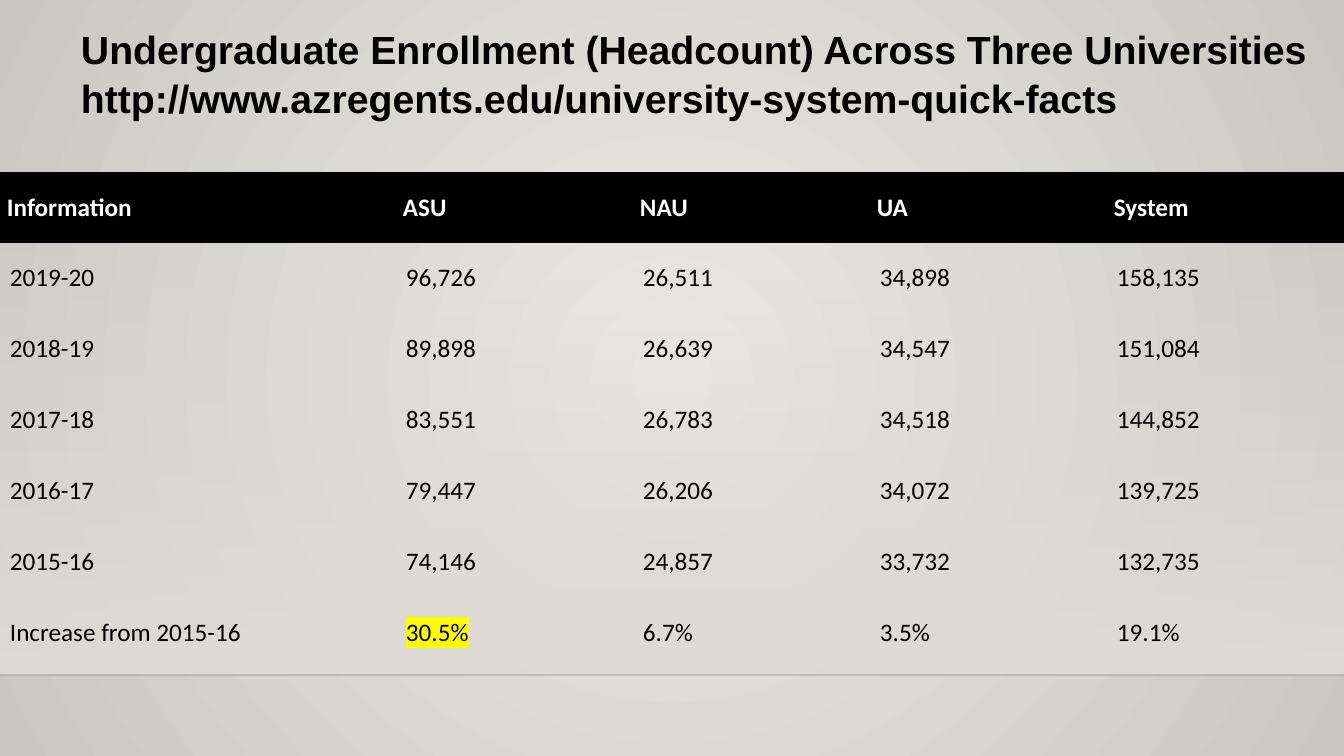
import pptx
import pptx.util
import pptx.dml.color
import pptx.enum.shapes
import pptx.enum.text
import pptx.oxml
import pptx.oxml.ns

RGBColor = pptx.dml.color.RGBColor
BLACK = RGBColor(0x00, 0x00, 0x00)
WHITE = RGBColor(0xFF, 0xFF, 0xFF)
YELLOW = RGBColor(0xFF, 0xFF, 0x00)
PALE = RGBColor(0xEC, 0xEA, 0xE7)
STONE = RGBColor(0xCA, 0xC7, 0xC1)
SAND = RGBColor(0xDF, 0xDB, 0xD5)
RULE = RGBColor(0x00, 0x00, 0x01)

WIDTH, HEIGHT = 1344, 756
EMU_PER_PX = 914400 / 100.8
NO_STYLE = "{2D5ABB26-0587-4C30-8999-92F81FD0307C}"
MIDDLE = pptx.enum.text.MSO_ANCHOR.MIDDLE
TOP = pptx.enum.text.MSO_ANCHOR.TOP

TITLE = [
    "Undergraduate Enrollment (Headcount) Across Three Universities",
    "http://www.azregents.edu/university-system-quick-facts",
]
ROWS = [
    ["Information", "ASU", "NAU", "UA", "System"],
    ["2019-20", "96,726", "26,511", "34,898", "158,135"],
    ["2018-19", "89,898", "26,639", "34,547", "151,084"],
    ["2017-18", "83,551", "26,783", "34,518", "144,852"],
    ["2016-17", "79,447", "26,206", "34,072", "139,725"],
    ["2015-16", "74,146", "24,857", "33,732", "132,735"],
    ["Increase from 2015-16", "30.5%", "6.7%", "3.5%", "19.1%"],
]
HIGHLIGHTED = "30.5%"


def px(n):
    return pptx.util.Emu(round(n * EMU_PER_PX))


def apply(obj, values):
    for name, value in values.items():
        setattr(obj, name, value)


def format_font(font, color, **values):
    apply(font, values)
    font.fill.solid()
    font.fill.fore_color.rgb = color


def make(tag, attributes="", body=""):
    ns = pptx.oxml.ns.nsdecls("a")
    return pptx.oxml.parse_xml(f"<a:{tag} {ns} {attributes}>{body}</a:{tag}>")


def find(element, tag):
    return next(element.iter(pptx.oxml.ns.qn(tag)))


def set_gradient(element, fill, stops, direction):
    fill.gradient()
    items = "".join(
        f'<a:gs pos="{pos * 1000}"><a:srgbClr val="{color}">'
        f'<a:alpha val="{alpha * 1000}"/></a:srgbClr></a:gs>'
        for pos, color, alpha in stops
    )
    old = find(element, "a:gradFill")
    new = make("gradFill", 'rotWithShape="1"', f"<a:gsLst>{items}</a:gsLst>{direction}")
    old.getparent().replace(old, new)


def add_backdrop(s, x, y, w, h):
    set_gradient(
        s.element, s.background.fill, [(0, PALE, 100), (100, STONE, 100)],
        '<a:path path="circle"><a:fillToRect l="50000" t="50000" r="50000" b="50000"/></a:path>',
    )
    sp = s.shapes.add_shape(
        pptx.enum.shapes.MSO_SHAPE.RECTANGLE, px(x), px(y), px(w), px(h))
    sp.shadow.inherit = False
    sp.line.fill.background()
    set_gradient(sp.element, sp.fill, [(0, SAND, 0), (100, SAND, 100)],
                 '<a:lin ang="5400000" scaled="0"/>')
    rule = s.shapes.add_connector(
        pptx.enum.shapes.MSO_CONNECTOR.STRAIGHT, px(x), px(y + h), px(x + w), px(y + h))
    rule.line.color.rgb = RULE
    rule.line.width = pptx.util.Pt(1)
    find(rule.element, "a:srgbClr").append(make("alpha", 'val="20000"'))
    find(rule.element, "p:spPr").append(make("effectLst"))


def add_title(s, x, y, w, h):
    sp = s.shapes.title
    apply(sp, {"left": px(x), "top": px(y), "width": px(w), "height": px(h)})
    tf = sp.text_frame
    apply(tf, {
        "text": "\n".join(TITLE), "word_wrap": True, "vertical_anchor": TOP,
        "margin_left": 0, "margin_right": 0, "margin_top": px(2), "margin_bottom": px(9),
    })
    for p in tf.paragraphs:
        apply(p, {"alignment": pptx.enum.text.PP_ALIGN.LEFT, "line_spacing": 1.05,
                  "space_before": 0})
        format_font(p.runs[0].font, BLACK, name="Arial", size=pptx.util.Pt(28), bold=True)


def fill_cell(cell, text, header):
    apply(cell, {
        "text": text, "vertical_anchor": MIDDLE,
        "margin_left": px(7 if header else 10), "margin_right": px(10),
        "margin_top": px(5), "margin_bottom": px(5),
    })
    if header:
        cell.fill.solid()
        cell.fill.fore_color.rgb = BLACK
    else:
        cell.fill.background()
    r = cell.text_frame.paragraphs[0].runs[0]
    format_font(r.font, WHITE if header else BLACK, name="Calibri",
                size=pptx.util.Pt(18), bold=header)
    if text == HIGHLIGHTED:
        find(cell.text_frame._txBody, "a:latin").addprevious(
            make("highlight", body=f'<a:srgbClr val="{YELLOW}"/>'))


def add_enrollment_table(s, x, y, w, h):
    frame = s.shapes.add_table(len(ROWS), len(ROWS[0]), px(x), px(y), px(w), px(h))
    find(frame.element, "a:tableStyleId").text = NO_STYLE
    table = frame.table
    value_width = 237
    label_width = w - value_width * (len(ROWS[0]) - 1)
    for i, column in enumerate(table.columns):
        column.width = px(value_width if i else label_width)
    for i, (row, texts) in enumerate(zip(table.rows, ROWS)):
        row.height = px(h / len(ROWS))
        for cell, text in zip(row.cells, texts):
            fill_cell(cell, text, i == 0)


def main():
    prs = pptx.Presentation()
    apply(prs, {"slide_width": px(WIDTH), "slide_height": px(HEIGHT)})
    s = prs.slides.add_slide(prs.slide_layouts.get_by_name("Title Only"))
    add_backdrop(s, 0, 223, WIDTH, 452)
    add_enrollment_table(s, 0, 172, WIDTH, 496)
    add_title(s, 81, 21, 1241, 151)
    prs.save("out.pptx")


if __name__ == "__main__":
    main()
